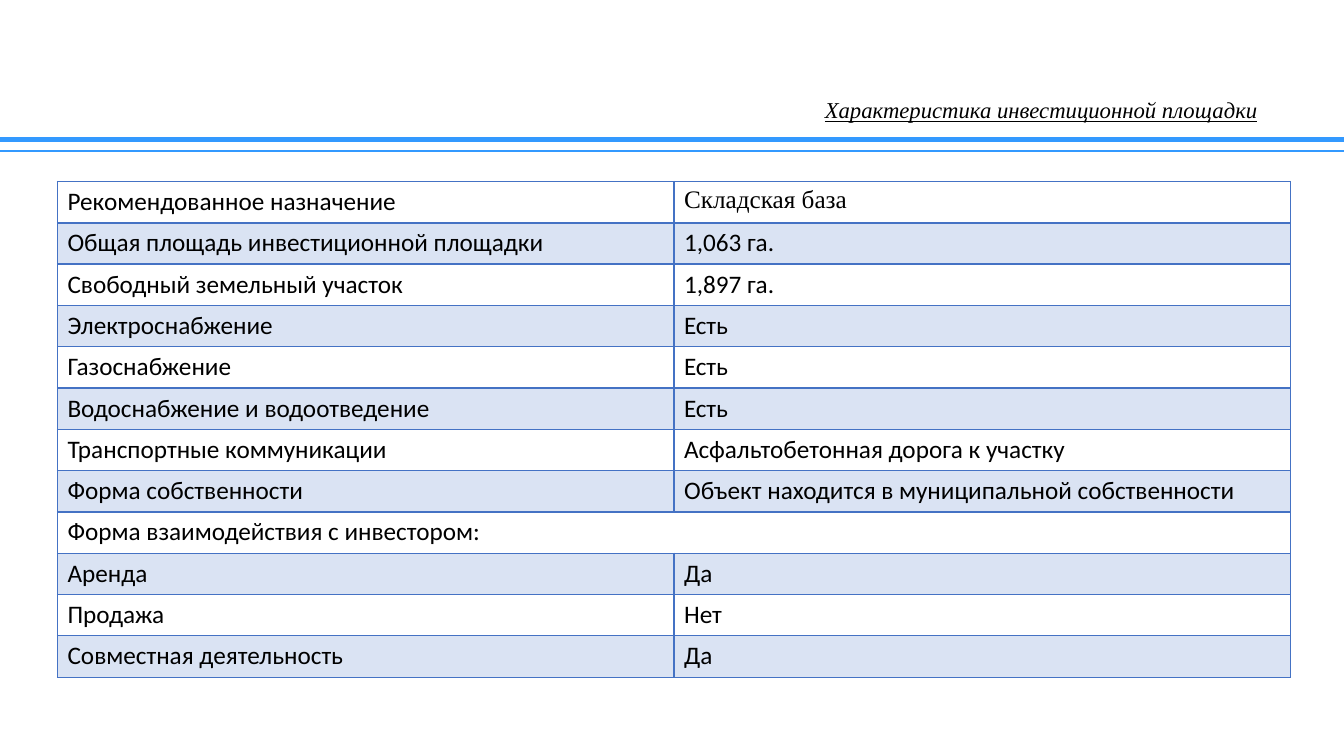
from lxml import etree
from pptx import Presentation
from pptx.dml.color import RGBColor
from pptx.enum.shapes import MSO_CONNECTOR
from pptx.enum.text import MSO_ANCHOR, PP_ALIGN
from pptx.oxml.ns import qn
from pptx.util import Inches, Pt

LINE = MSO_CONNECTOR.STRAIGHT
MIDDLE = MSO_ANCHOR.MIDDLE
CENTER = PP_ALIGN.CENTER

BLACK = RGBColor(0x00, 0x00, 0x00)
SKY = RGBColor(0x33, 0x99, 0xFF)
BLUE = RGBColor(0x44, 0x72, 0xC4)
BAND = RGBColor(0xDA, 0xE3, 0xF3)
SERIF = "Times New Roman"
SANS = "Calibri"

WIDTH, HEIGHT = 13.33, 7.5
TITLE = "Характеристика инвестиционной площадки"
ROWS = [
    ("Рекомендованное назначение", "Складская база"),
    ("Общая площадь инвестиционной площадки", "1,063 га."),
    ("Свободный земельный участок", "1,897 га."),
    ("Электроснабжение", "Есть"),
    ("Газоснабжение", "Есть"),
    ("Водоснабжение и водоотведение", "Есть"),
    ("Транспортные коммуникации", "Асфальтобетонная дорога к участку"),
    ("Форма собственности", "Объект находится в муниципальной собственности"),
    ("Форма взаимодействия с инвестором:", None),
    ("Аренда", "Да"),
    ("Продажа", "Нет"),
    ("Совместная деятельность", "Да"),
]


def add_rule(slide, y, weight):
    """Draw a line across the whole slide."""
    rule = slide.shapes.add_connector(
        LINE, 0, Inches(y), Inches(WIDTH), Inches(y))
    rule.line.color.rgb = SKY
    rule.line.width = Pt(weight)
    etree.SubElement(rule._element.spPr, qn("a:effectLst"))


def set_title(slide, left, top, width, height):
    title = slide.shapes.title
    title.left, title.top = Inches(left), Inches(top)
    title.width, title.height = Inches(width), Inches(height)
    frame = title.text_frame
    frame.text = TITLE
    frame.word_wrap = True
    frame.vertical_anchor = MIDDLE
    para = frame.paragraphs[0]
    para.alignment = CENTER
    para.line_spacing = 0.9
    font = para.font
    font.name, font.size = SERIF, Pt(16.2)
    font.italic = font.underline = True
    font.color.rgb = BLACK


def set_edges(cell, top, bottom):
    """Frame a cell; the edge elements come before its fill."""
    props = cell._tc.get_or_add_tcPr()
    edges = (("lnL", 1), ("lnR", 1), ("lnT", top), ("lnB", bottom))
    for place, (tag, weight) in enumerate(edges):
        edge = etree.Element(qn(f"a:{tag}"), w=str(Pt(weight)))
        fill = etree.SubElement(edge, qn("a:solidFill"))
        etree.SubElement(fill, qn("a:srgbClr"), val=str(BLUE))
        props.insert(place, edge)


def add_facts(slide, left, top, width, height):
    table = slide.shapes.add_table(
        len(ROWS), 2, Inches(left), Inches(top),
        Inches(width), Inches(height)).table
    table.first_row = table.horz_banding = False
    for row, texts in enumerate(ROWS):
        table.rows[row].height = Inches(height / len(ROWS))
        for col, text in enumerate(texts):
            cell = table.cell(row, col)
            if row % 2:
                cell.fill.solid()
                cell.fill.fore_color.rgb = BAND
            else:
                cell.fill.background()
            set_edges(cell, 2 if row == 1 else 1, 2 if row == 0 else 1)
            cell.text = text or ""
            font = cell.text_frame.paragraphs[0].font
            font.name = SERIF if (row, col) == (0, 1) else SANS
            font.size = Pt(18)
            font.color.rgb = BLACK
        # A heading row spans both columns
        if texts[1] is None:
            table.cell(row, 0).merge(table.cell(row, 1))


def main():
    deck = Presentation()
    deck.slide_width, deck.slide_height = Inches(WIDTH), Inches(HEIGHT)
    slide = deck.slides.add_slide(deck.slide_layouts[5])
    # Header
    add_rule(slide, 1.38, 3.5)
    add_rule(slide, 1.5, 1.5)
    set_title(slide, 7.86, 0.97, 4.93, 0.27)
    # Site facts
    add_facts(slide, 0.57, 1.8, 12.23, 4.92)
    deck.save("out.pptx")


if __name__ == "__main__":
    main()
